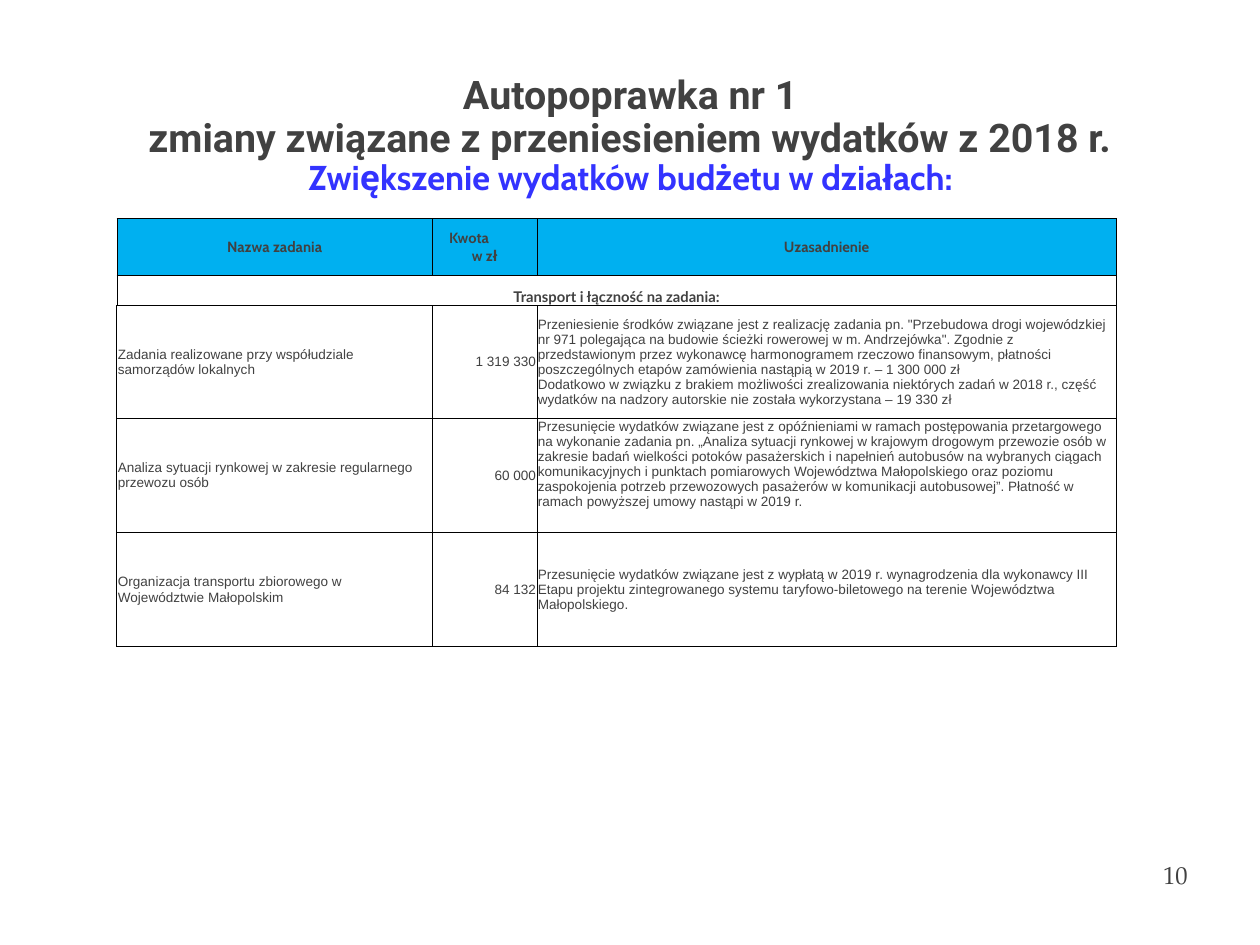
import pptx
import pptx.util
import pptx.dml.color
import pptx.enum.text
from lxml import etree

PX = 9144
RGBColor = pptx.dml.color.RGBColor
INK = RGBColor(0x41, 0x41, 0x41)
BLUE = RGBColor(0x33, 0x33, 0xFF)
SKY = RGBColor(0x00, 0xB0, 0xF0)
BLACK = RGBColor(0, 0, 0)
ALIGN = pptx.enum.text.PP_ALIGN
ANCHOR = pptx.enum.text.MSO_ANCHOR
DRAWING = "http://schemas.openxmlformats.org/drawingml/2006/main"

COLUMNS = (356, 118, 654)
ROWS = (64, 34, 127, 129, 129)
HEADINGS = ("Nazwa zadania", "Kwota\nw zł", "Uzasadnienie")
SECTION = "Transport i łączność na zadania:"
TASKS = (
    ("Zadania realizowane przy współudziale samorządów lokalnych", "1 319 330",
     "Przeniesienie środków związane jest z realizację zadania pn. \"Przebudowa drogi "
     "wojewódzkiej nr 971 polegająca na budowie ścieżki rowerowej w m. Andrzejówka\". "
     "Zgodnie z przedstawionym przez wykonawcę harmonogramem rzeczowo finansowym, płatności "
     "poszczególnych etapów zamówienia nastąpią w 2019 r. – 1 300 000 zł\n"
     "Dodatkowo w związku z brakiem możliwości zrealizowania niektórych zadań w 2018 r., "
     "część wydatków na nadzory autorskie nie została wykorzystana – 19 330 zł"),
    ("Analiza sytuacji rynkowej w zakresie regularnego przewozu osób", "60 000",
     "Przesunięcie wydatków związane jest z opóźnieniami w ramach postępowania przetargowego "
     "na wykonanie zadania pn. „Analiza sytuacji rynkowej w krajowym drogowym przewozie osób "
     "w zakresie badań wielkości potoków pasażerskich i napełnień autobusów na wybranych "
     "ciągach komunikacyjnych i punktach pomiarowych Województwa Małopolskiego oraz poziomu "
     "zaspokojenia potrzeb przewozowych pasażerów w komunikacji autobusowej”. Płatność w "
     "ramach powyższej umowy nastąpi w 2019 r."),
    ("Organizacja transportu zbiorowego w Województwie Małopolskim", "84 132",
     "Przesunięcie wydatków związane jest z wypłatą w 2019 r. wynagrodzenia dla wykonawcy III "
     "Etapu projektu zintegrowanego systemu taryfowo-biletowego na terenie Województwa "
     "Małopolskiego."),
)


def px(length):
    """Turn whole px into EMU."""
    return pptx.util.Emu(length * PX)


def style(run, face, size, color=INK, bold=False):
    """Set the font of one run."""
    run.font.name = face
    run.font.size = pptx.util.Pt(size)
    run.font.color.rgb = color
    run.font.bold = bold


def add_text(slide, box, text, inset):
    """Place centred text in a box and return its paragraph."""
    frame = slide.shapes.add_textbox(*map(px, box)).text_frame
    frame.word_wrap = True
    frame.vertical_anchor = ANCHOR.MIDDLE
    frame.margin_left = frame.margin_right = px(inset)
    frame.margin_top = frame.margin_bottom = px(inset)
    frame.text = text
    paragraph = frame.paragraphs[0]
    paragraph.alignment = ALIGN.CENTER
    return paragraph


def add_title(slide, box):
    """Write the three-line heading."""
    heading = add_text(slide, box, "Autopoprawka nr 1\v"
                       "zmiany związane z przeniesieniem wydatków z 2018 r.\v"
                       "Zwiększenie wydatków budżetu w działach:", 0)
    heading.line_spacing = 0.9
    amendment, reason, increase = heading.runs
    for line in (amendment, reason):
        style(line, "Roboto", 32, bold=True)
    style(increase, "Cabin", 28, BLUE, True)


def add_page_number(slide, box):
    """Write the page number."""
    style(add_text(slide, box, "10", 6).runs[0], "TeX Gyre Pagella", 20)


def set_borders(cell, left=0.5, right=0.5):
    """Draw the four borders of a cell, widths in points."""
    properties = cell._tc.get_or_add_tcPr()
    widths = {"lnL": left, "lnR": right, "lnT": 0.5, "lnB": 0.5}
    for position, (side, width) in enumerate(widths.items()):
        line = etree.Element(f"{{{DRAWING}}}{side}", w=str(int(pptx.util.Pt(width))))
        fill = etree.SubElement(line, f"{{{DRAWING}}}solidFill")
        etree.SubElement(fill, f"{{{DRAWING}}}srgbClr", val=str(BLACK))
        properties.insert(position, line)


def fill_cell(cell, text, face, size, bold, align, anchor=ANCHOR.MIDDLE):
    """Write and format the text of a cell."""
    cell.margin_left = cell.margin_right = cell.margin_top = px(1)
    cell.margin_bottom = 0
    cell.vertical_anchor = anchor
    cell.text_frame.text = text
    for paragraph in cell.text_frame.paragraphs:
        paragraph.alignment = align
        for run in paragraph.runs:
            style(run, face, size, bold=bold)


def add_spending_table(slide, box):
    """Build the table of increased spending."""
    table = slide.shapes.add_table(len(ROWS), len(COLUMNS), *map(px, box)).table
    table.first_row = table.horz_banding = False
    for column, width in zip(table.columns, COLUMNS):
        column.width = px(width)
    for row, height in zip(table.rows, ROWS):
        row.height = px(height)
    for cell in table.iter_cells():
        cell.fill.background()

    for column, heading in enumerate(HEADINGS):
        cell = table.cell(0, column)
        fill_cell(cell, heading, "Cabin", 12, True, ALIGN.CENTER)
        cell.fill.solid()
        cell.fill.fore_color.rgb = SKY
        set_borders(cell)
    amount = table.cell(0, 1).text_frame.paragraphs[0]
    amount.alignment = ALIGN.LEFT
    amount._p.get_or_add_pPr().set("marL", str(px(18)))

    section = table.cell(1, 0)
    section.merge(table.cell(1, len(COLUMNS) - 1))
    fill_cell(section, SECTION, "Lato", 12, True, ALIGN.CENTER, ANCHOR.BOTTOM)
    for column in range(len(COLUMNS)):
        set_borders(table.cell(1, column))

    for row, task in enumerate(TASKS, 2):
        for column, text in enumerate(task):
            cell = table.cell(row, column)
            align = ALIGN.RIGHT if column == 1 else ALIGN.LEFT
            fill_cell(cell, text, "Arial", 11, False, align)
            set_borders(cell, 1 if column == 0 else 0.5, 1 if column == 2 else 0.5)
    table.cell(3, 2).vertical_anchor = ANCHOR.TOP


def main():
    """Build and save the slide."""
    deck = pptx.Presentation()
    deck.slide_width, deck.slide_height = px(1422), px(1067)
    slide = deck.slides.add_slide(deck.slide_layouts[6])
    add_page_number(slide, (1286, 965, 81, 45))
    add_title(slide, (56, 88, 1311, 133))
    add_spending_table(slide, (132, 247, sum(COLUMNS), sum(ROWS)))
    deck.save("out.pptx")


if __name__ == "__main__":
    main()
